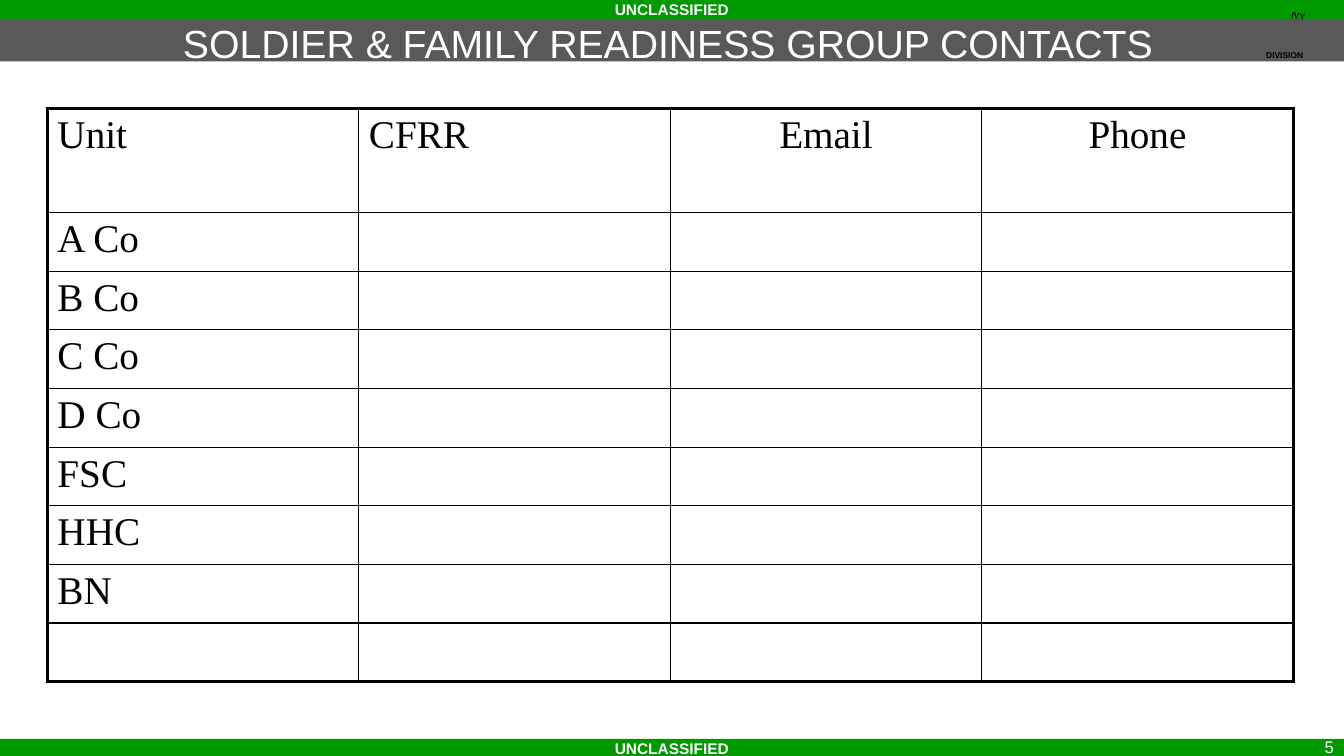
from pptx import Presentation
from pptx.dml.color import RGBColor
from pptx.enum.shapes import MSO_SHAPE
from pptx.enum.text import MSO_ANCHOR, MSO_AUTO_SIZE, PP_ALIGN
from pptx.oxml.ns import qn
from pptx.util import Inches, Pt
from lxml.etree import SubElement

GRID_COLUMNS, GRID_ROWS = 160, 90
HEADERS = ["Unit", "CFRR", "Email", "Phone"]
UNITS = ["A Co", "B Co", "C Co", "D Co", "FSC", "HHC", "BN", ""]
HEADER_HEIGHT, UNIT_HEIGHT, COLUMN_WIDTH = 12.36, 6.98, 37.08


def color(value):
    return RGBColor.from_string(value)


class SlideBuilder:
    """Holds the style and the slide, with lengths in grid columns and rows."""

    black, white, gray, green = "000000", "FFFFFF", "595959", "009900"
    sans, serif = "Arial", "Times New Roman"
    thin, thick = 1, 2.25

    def __init__(self, presentation):
        self.slide = presentation.slides.add_slide(presentation.slide_layouts[5])
        self.column = presentation.slide_width / GRID_COLUMNS
        self.row = presentation.slide_height / GRID_ROWS

    def place(self, left, top, width, height):
        return (round(left * self.column), round(top * self.row),
                round(width * self.column), round(height * self.row))

    def add_text(self, frame, text, size, ink, align, font=sans, bold=False):
        frame.vertical_anchor = MSO_ANCHOR.MIDDLE
        paragraph = frame.paragraphs[0]
        paragraph.alignment = align
        self.add_run(paragraph, text, size, ink, font, bold)

    def add_run(self, paragraph, text, size, ink, font, bold=False):
        run = paragraph.add_run()
        run.text = text
        run.font.name, run.font.size, run.font.bold = font, Pt(size), bold
        run.font.color.rgb = color(ink)

    def band(self, area, fill, text=""):
        shape = self.slide.shapes.add_shape(MSO_SHAPE.RECTANGLE, *self.place(*area))
        shape.shadow.inherit = False
        shape.fill.solid()
        shape.fill.fore_color.rgb = color(fill)
        shape.line.fill.background()
        if text:
            self.add_text(shape.text_frame, text, 11, self.white, PP_ALIGN.CENTER, bold=True)

    def label(self, area, text, size, ink, align=PP_ALIGN.CENTER, bold=False, rotation=0):
        shape = self.slide.shapes.add_textbox(*self.place(*area))
        shape.rotation = rotation
        shape.text_frame.word_wrap = True
        self.add_text(shape.text_frame, text, size, ink, align, bold=bold)

    def title(self, area, text):
        shape = self.slide.shapes.title
        shape.left, shape.top, shape.width, shape.height = self.place(*area)
        shape.text_frame.auto_size = MSO_AUTO_SIZE.NONE
        self.add_text(shape.text_frame, text, 28, self.white, PP_ALIGN.CENTER)
        self.slide.shapes.element.append(shape.element)

    def border(self, cell, side, weight):
        line = SubElement(cell._tc.get_or_add_tcPr(), qn(f"a:ln{side}"), w=str(Pt(weight)))
        fill = SubElement(line, qn("a:solidFill"))
        SubElement(fill, qn("a:srgbClr"), val=self.black)

    def table(self, left, top, rows, heights, column_width):
        last_row, last_column = len(rows) - 1, len(rows[0]) - 1
        area = self.place(left, top, column_width * len(rows[0]), sum(heights))
        table = self.slide.shapes.add_table(len(rows), len(rows[0]), *area).table
        table.first_row = table.horz_banding = False
        for column in table.columns:
            column.width = round(column_width * self.column)
        for row, height in zip(table.rows, heights):
            row.height = round(height * self.row)
        for r, texts in enumerate(rows):
            for c, text in enumerate(texts):
                cell = table.cell(r, c)
                edges = {"L": c == 0, "R": c == last_column, "T": r == 0, "B": r == last_row}
                for side, outer in edges.items():
                    self.border(cell, side, self.thick if outer else self.thin)
                cell.fill.background()
                if text:
                    paragraph = cell.text_frame.paragraphs[0]
                    paragraph.alignment = PP_ALIGN.CENTER if c > 1 else PP_ALIGN.LEFT
                    self.add_run(paragraph, text, 28, self.black, self.serif)


def main():
    presentation = Presentation()
    presentation.slide_width, presentation.slide_height = Inches(13.33), Inches(7.5)
    builder = SlideBuilder(presentation)
    builder.band((0, 0.24, GRID_COLUMNS, 7.08), builder.gray)
    for top in (0, 87.96):
        builder.band((0, top, GRID_COLUMNS, 2.28), builder.green, "UNCLASSIFIED")
    builder.label((148.8, 5.52, 8.28, 2.04), "DIVISION", 6, builder.black, bold=True)
    builder.label((149.16, 0.84, 10.8, 2.04), "IVY", 6, builder.black, bold=True, rotation=6.9)
    rows = [HEADERS] + [[unit, "", "", ""] for unit in UNITS]
    heights = [HEADER_HEIGHT] + [UNIT_HEIGHT] * len(UNITS)
    builder.table(5.64, 12.96, rows, heights, COLUMN_WIDTH)
    builder.title((18.84, 2.76, 121.32, 4.68), "SOLDIER & FAMILY READINESS GROUP CONTACTS")
    builder.label((124, 87.72, 36, 2.4), "5", 12, builder.white, PP_ALIGN.RIGHT)
    presentation.save("out.pptx")


if __name__ == "__main__":
    main()
